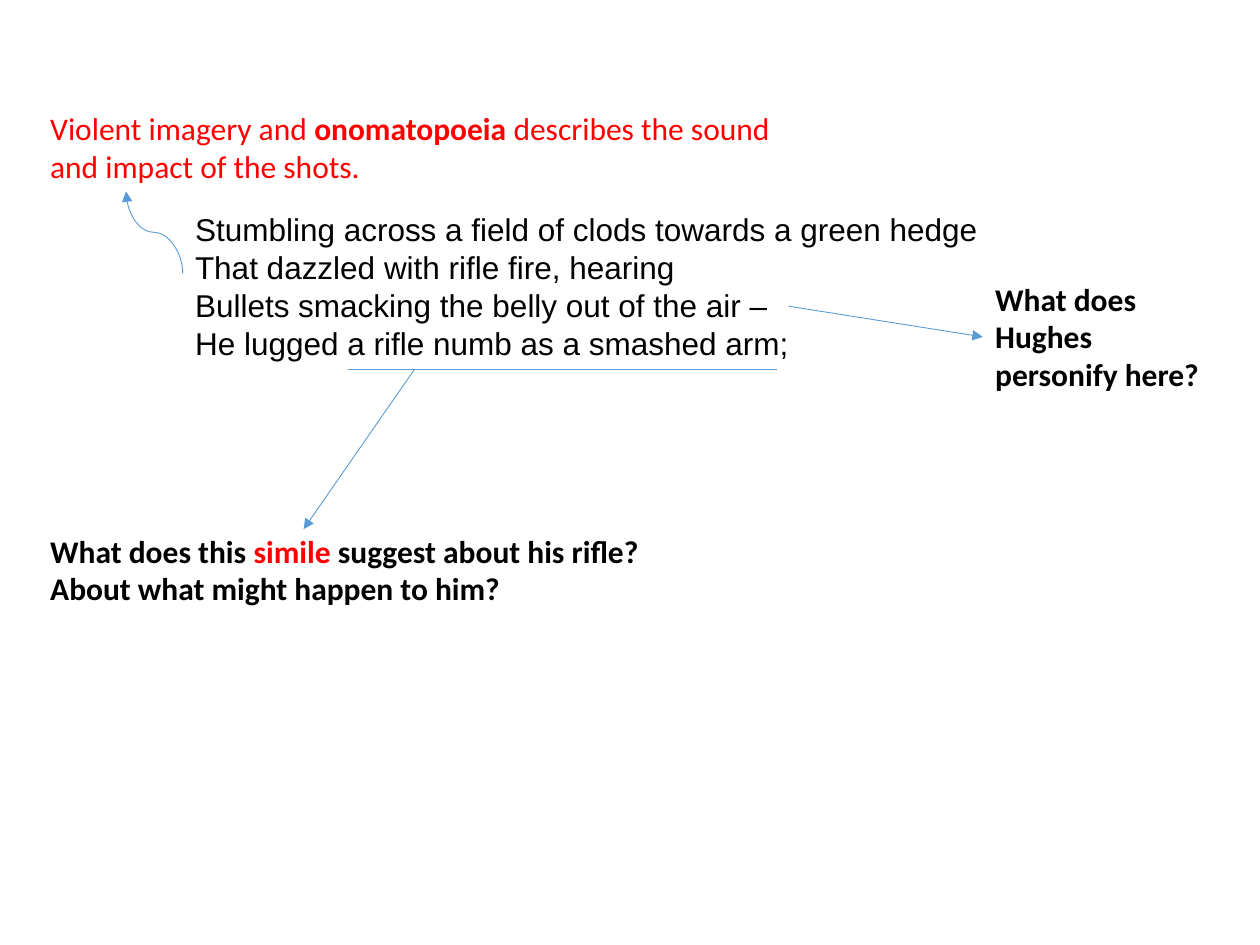
from dataclasses import dataclass
from typing import NamedTuple

from lxml.etree import SubElement
from pptx import Presentation
from pptx.dml.color import RGBColor
from pptx.enum.shapes import MSO_CONNECTOR
from pptx.enum.text import MSO_AUTO_SIZE
from pptx.oxml.ns import qn
from pptx.shapes.autoshape import Shape
from pptx.shapes.connector import Connector
from pptx.slide import Slide
from pptx.util import Pt


@dataclass(frozen=True)
class Theme:
    ink: RGBColor = RGBColor(0x00, 0x00, 0x00)
    highlight: RGBColor = RGBColor(0xFF, 0x00, 0x00)
    line: RGBColor = RGBColor(0x5B, 0x9B, 0xD5)
    poem_font: str = "Arial"
    note_font: str = "Calibri"
    text_size: float = 18
    line_width: float = 0.5


THEME = Theme()


class Run(NamedTuple):
    text: str
    bold: bool = False
    color: RGBColor = THEME.ink


class TextBlock(NamedTuple):
    left: float
    top: float
    width: float
    height: float
    font: str
    paragraphs: list[list[Run]]


class Line(NamedTuple):
    begin: tuple[float, float]
    end: tuple[float, float]
    arrow: bool = True
    kind: MSO_CONNECTOR = MSO_CONNECTOR.STRAIGHT


POEM = TextBlock(104.4, 116.6, 472.3, 94.3, THEME.poem_font, [
    [Run("Stumbling across a field of clods towards a green hedge")],
    [Run("That dazzled with rifle fire, hearing")],
    [Run("Bullets smacking the belly out of the air –")],
    [Run("He lugged a rifle numb as a smashed arm;")],
])
PERSONIFY_NOTE = TextBlock(561.6, 156.2, 143.3, 72.7, THEME.note_font, [
    [Run("What does Hughes personify here?", True)],
])
IMAGERY_NOTE = TextBlock(21.6, 59, 429.8, 51.1, THEME.note_font, [[
    Run("Violent imagery and ", color=THEME.highlight),
    Run("onomatopoeia ", True, THEME.highlight),
    Run("describes the sound and impact of the shots.", color=THEME.highlight),
]])
SIMILE_NOTE = TextBlock(21.6, 300.2, 397.4, 51.1, THEME.note_font, [[
    Run("What does this ", True),
    Run("simile", True, THEME.highlight),
    Run(" suggest about his rifle? About what might happen to him?", True),
]])

PERSONIFY_ARROW = Line((450.7, 175), (561.6, 192.6))
SIMILE_ARROW = Line((236.9, 211), (173.5, 302.4))
SIMILE_UNDERLINE = Line((198.7, 211), (444.2, 211), arrow=False)
# Ends before the quarter turn that makes the curve leave and arrive vertically.
IMAGERY_ARROW = Line((64.8, 149), (111.6, 116.6), kind=MSO_CONNECTOR.CURVE)


def add_text(slide: Slide, block: TextBlock) -> Shape:
    shape = slide.shapes.add_textbox(
        Pt(block.left), Pt(block.top), Pt(block.width), Pt(block.height))
    frame = shape.text_frame
    frame.word_wrap = True
    frame.auto_size = MSO_AUTO_SIZE.SHAPE_TO_FIT_TEXT
    for index, runs in enumerate(block.paragraphs):
        paragraph = frame.add_paragraph() if index else frame.paragraphs[0]
        for item in runs:
            run = paragraph.add_run()
            run.text = item.text
            formats = {"name": block.font, "size": Pt(THEME.text_size), "bold": item.bold}
            for name, value in formats.items():
                setattr(run.font, name, value)
            run.font.color.rgb = item.color
    return shape


def add_line(slide: Slide, line: Line) -> Connector:
    connector = slide.shapes.add_connector(
        line.kind, *(Pt(value) for value in line.begin + line.end))
    connector.line.color.rgb = THEME.line
    connector.line.width = Pt(THEME.line_width)
    if line.arrow:
        SubElement(connector.line._get_or_add_ln(), qn("a:tailEnd"), type="triangle")
    SubElement(connector._element.spPr, qn("a:effectLst"))
    return connector


def main() -> None:
    presentation = Presentation()
    presentation.slide_width, presentation.slide_height = Pt(720), Pt(540)
    slide = presentation.slides.add_slide(presentation.slide_layouts[6])

    add_text(slide, POEM)
    personify_box = add_text(slide, PERSONIFY_NOTE)
    add_line(slide, PERSONIFY_ARROW).end_connect(personify_box, 1)
    add_text(slide, IMAGERY_NOTE)
    curve = add_line(slide, IMAGERY_ARROW)
    curve._element.spPr.find(qn("a:xfrm")).set("rot", str(270 * 60000))
    add_text(slide, SIMILE_NOTE)
    add_line(slide, SIMILE_ARROW)
    add_line(slide, SIMILE_UNDERLINE)

    presentation.save("out.pptx")


if __name__ == "__main__":
    main()
